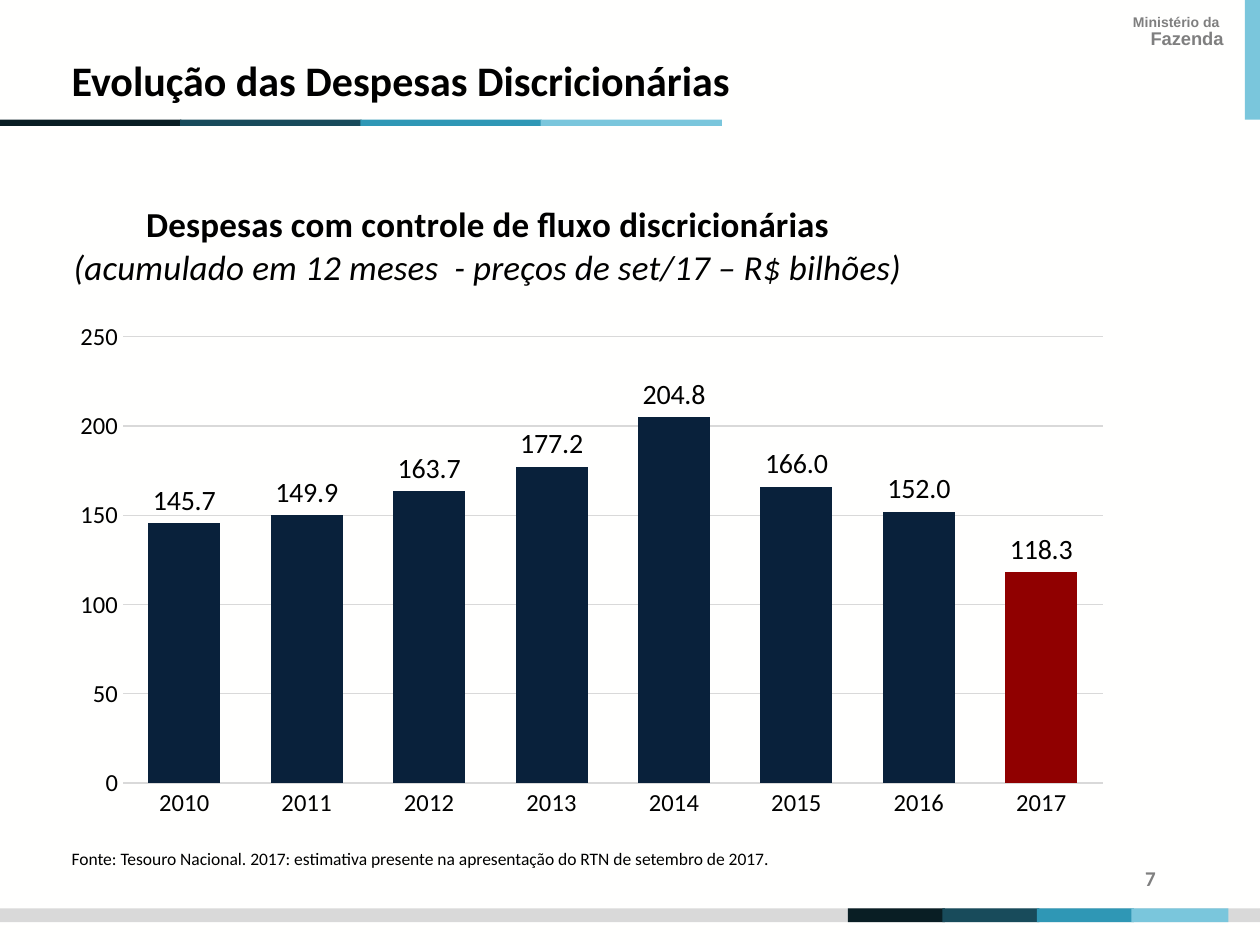
from dataclasses import dataclass, field

from lxml.etree import SubElement
from pptx import Presentation
from pptx.chart.data import CategoryChartData
from pptx.dml.color import RGBColor
from pptx.enum.chart import XL_CHART_TYPE, XL_LABEL_POSITION, XL_TICK_MARK
from pptx.enum.shapes import MSO_SHAPE
from pptx.enum.text import MSO_ANCHOR, PP_ALIGN
from pptx.oxml.ns import qn
from pptx.util import Inches, Pt


@dataclass(frozen=True)
class Theme:
    background: str = "FFFFFE"
    text: str = "000000"
    muted: str = "7F7F7F"
    line: str = "D9D9D9"
    column: str = "09213B"
    estimate: str = "900000"
    bands: tuple = ("091E24", "184B5B", "2F97B5", "7AC6DC")
    font: str = "Calibri"
    header_font: str = "Arial"
    title_size: float = 24
    chart_title_size: float = 20
    label_size: float = 16
    axis_size: float = 14
    number_size: float = 12
    ministry_size: float = 10.5
    source_size: float = 10
    prefix_size: float = 8


THEME = Theme()


@dataclass(frozen=True)
class Bar:
    left: float
    top: float
    width: float
    height: float
    color: str


@dataclass(frozen=True)
class Line:
    text: str
    size: float
    font: str = THEME.font
    color: str = THEME.text
    bold: bool = False


@dataclass(frozen=True)
class Block:
    left: float
    top: float
    width: float
    height: float
    lines: tuple
    frame: dict = field(default_factory=dict)
    paragraph: dict = field(default_factory=dict)


def apply(target, values: dict) -> None:
    for name, value in values.items():
        setattr(target, name, value)


def style_font(font, size: float, color: str = THEME.text, name: str = THEME.font,
               bold: bool = False, italic: bool = False) -> None:
    apply(font, {"size": Pt(size), "name": name, "bold": bold, "italic": italic})
    font.color.rgb = RGBColor.from_string(color)


def draw_bar(slide, bar: Bar) -> None:
    shape = slide.shapes.add_shape(MSO_SHAPE.RECTANGLE, Inches(bar.left), Inches(bar.top),
                                   Inches(bar.width), Inches(bar.height))
    shape.shadow.inherit = False
    shape.fill.solid()
    shape.fill.fore_color.rgb = RGBColor.from_string(bar.color)
    shape.line.fill.background()


def draw_block(slide, block: Block) -> None:
    box = slide.shapes.add_textbox(Inches(block.left), Inches(block.top),
                                   Inches(block.width), Inches(block.height))
    frame = box.text_frame
    apply(frame, {"word_wrap": True, **block.frame})
    for index, line in enumerate(block.lines):
        para = frame.add_paragraph() if index else frame.paragraphs[0]
        apply(para, block.paragraph)
        span = para.add_run()
        span.text = line.text
        style_font(span.font, line.size, line.color, line.font, line.bold)


def place_in_chart(parent, values: dict) -> None:
    """Give a chart title or plot area a manual layout, in shares of the chart."""
    layout = parent.find(qn("c:layout"))
    if layout is None:
        layout = SubElement(parent, qn("c:layout"))
        parent.remove(layout)
        parent.insert(1 if parent.tag == qn("c:title") else 0, layout)
    manual = SubElement(layout, qn("c:manualLayout"))
    for name, value in values.items():
        SubElement(manual, qn(f"c:{name}")).set("val", str(value))


def draw_chart(slide, spending: dict) -> None:
    data = CategoryChartData(number_format="#,##0.0")
    data.categories = list(spending)
    data.add_series("Despesas discricionárias", list(spending.values()))
    chart = slide.shapes.add_chart(XL_CHART_TYPE.COLUMN_CLUSTERED, Inches(0.47), Inches(1.51),
                                   Inches(8.45), Inches(5.06), data).chart
    chart.has_legend = False
    style_font(chart.font, THEME.axis_size)

    # Chart title
    frame = chart.chart_title.text_frame
    title_lines = (
        ("Despesas com controle de fluxo discricionárias", {"bold": True}),
        ("(acumulado em 12 meses  - preços de set/17 – R$ bilhões)", {"italic": True}),
    )
    for index, (text, emphasis) in enumerate(title_lines):
        para = frame.add_paragraph() if index else frame.paragraphs[0]
        para.alignment = PP_ALIGN.CENTER
        span = para.add_run()
        span.text = text
        style_font(span.font, THEME.chart_title_size, **emphasis)
    place_in_chart(chart.chart_title._element,
                   {"xMode": "edge", "yMode": "edge", "x": 0.01, "y": 0.01})
    plot_area = chart._chartSpace.chart.plotArea
    place_in_chart(plot_area, {"layoutTarget": "inner", "xMode": "edge", "yMode": "edge",
                               "x": 0.06, "y": 0.23, "w": 0.92, "h": 0.7})

    # Axes
    for axis in (chart.category_axis, chart.value_axis):
        apply(axis, {"major_tick_mark": XL_TICK_MARK.NONE, "minor_tick_mark": XL_TICK_MARK.NONE})
        style_font(axis.tick_labels.font, THEME.axis_size)
    values = chart.value_axis
    apply(values, {"minimum_scale": 0, "maximum_scale": 250, "major_unit": 50})
    apply(values.tick_labels, {"number_format": "0", "number_format_is_linked": False})
    values.format.line.fill.background()
    for line in (chart.category_axis.format.line, values.major_gridlines.format.line):
        line.color.rgb = RGBColor.from_string(THEME.line)
        line.width = Pt(0.75)

    # Columns, with the estimated year set apart
    plot = chart.plots[0]
    apply(plot, {"gap_width": 70, "vary_by_categories": False, "has_data_labels": True})
    series = plot.series[0]
    estimate = series.points[len(spending) - 1]
    for part, color in ((series, THEME.column), (estimate, THEME.estimate)):
        part.format.fill.solid()
        part.format.fill.fore_color.rgb = RGBColor.from_string(color)
    apply(plot.data_labels, {"show_value": True, "number_format": "#,##0.0",
                             "number_format_is_linked": False,
                             "position": XL_LABEL_POSITION.OUTSIDE_END})
    style_font(plot.data_labels.font, THEME.label_size)


SPENDING = {"2010": 145.7, "2011": 149.9, "2012": 163.7, "2013": 177.2,
            "2014": 204.8, "2015": 166.0, "2016": 152.0, "2017": 118.3}

BARS = [
    Bar(0, 7.21, 10, 0.11, THEME.line),
    *(Bar(6.73 + 0.75 * i, 7.21, 0.77, 0.11, color) for i, color in enumerate(THEME.bands)),
    Bar(9.88, 0, 0.12, 0.95, THEME.bands[-1]),
    *(Bar(1.43 * i, 0.95, 1.44, 0.05, color) for i, color in enumerate(THEME.bands)),
]

BLOCKS = [
    Block(8.65, 0.07, 1.16, 0.38,
          (Line("Ministério da ", THEME.prefix_size, THEME.header_font, THEME.muted, True),
           Line("Fazenda", THEME.ministry_size, THEME.header_font, THEME.muted, True)),
          paragraph={"alignment": PP_ALIGN.RIGHT, "line_spacing": 0.9}),
    Block(0.47, 0.12, 8.51, 0.76,
          (Line("Evolução das Despesas Discricionárias", THEME.title_size, bold=True),),
          frame={"vertical_anchor": MSO_ANCHOR.BOTTOM}),
    Block(0.47, 6.68, 8.45, 0.48,
          (Line("Fonte: Tesouro Nacional. 2017: estimativa presente na apresentação "
                "do RTN de setembro de 2017.", THEME.source_size),)),
    Block(8.83, 6.77, 0.6, 0.4,
          (Line("7", THEME.number_size, color=THEME.muted, bold=True),),
          frame={"vertical_anchor": MSO_ANCHOR.MIDDLE},
          paragraph={"alignment": PP_ALIGN.CENTER}),
]


def main() -> None:
    deck = Presentation()
    apply(deck, {"slide_width": Inches(10), "slide_height": Inches(7.5)})
    slide = deck.slides.add_slide(deck.slide_layouts[6])
    slide.background.fill.solid()
    slide.background.fill.fore_color.rgb = RGBColor.from_string(THEME.background)
    for bar in BARS:
        draw_bar(slide, bar)
    for block in BLOCKS:
        draw_block(slide, block)
    draw_chart(slide, SPENDING)
    deck.save("out.pptx")


if __name__ == "__main__":
    main()
